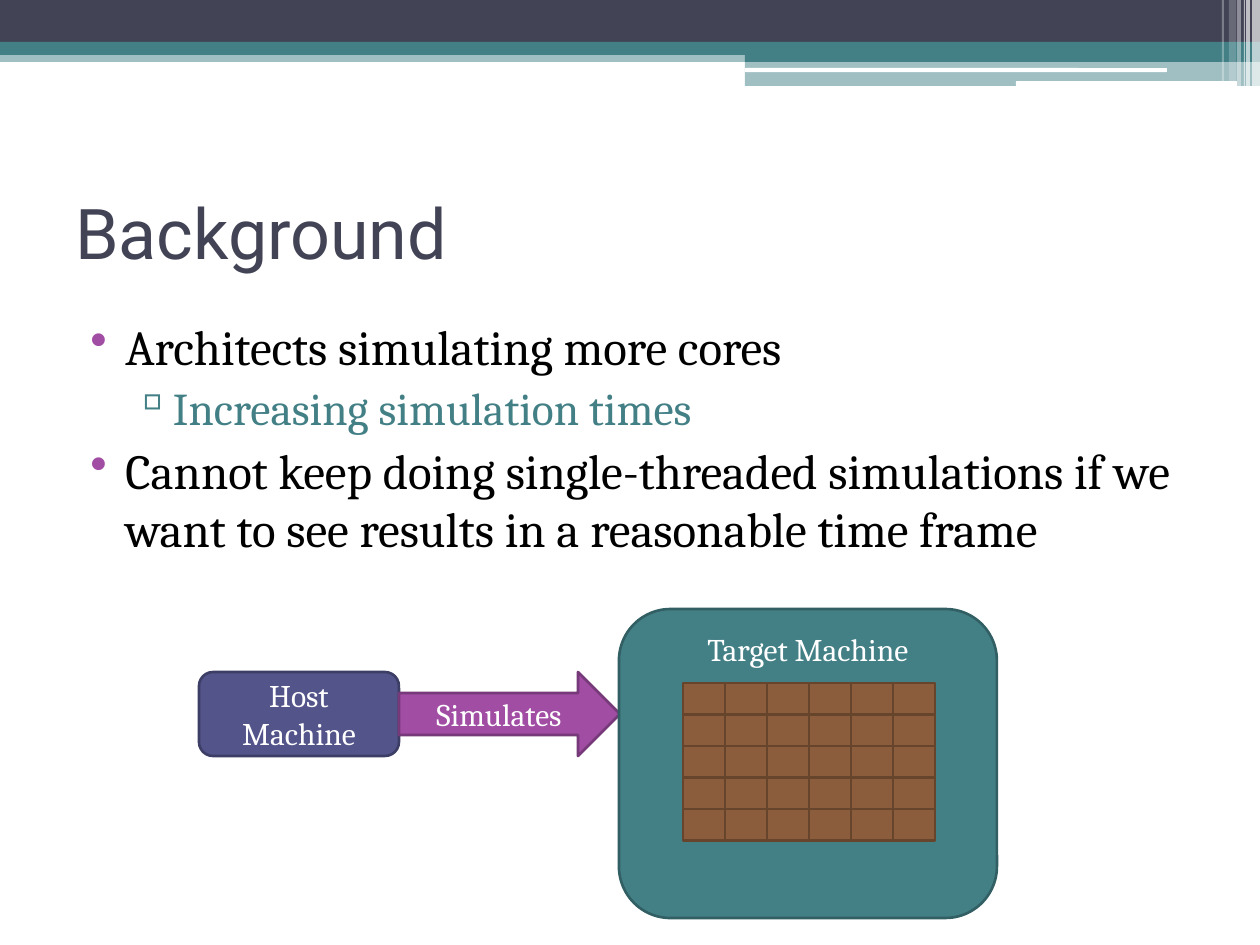
import pptx
import pptx.dml.color
import pptx.enum.shapes
import pptx.enum.text
import pptx.oxml
import pptx.oxml.ns
import pptx.util

SCALE = 914400 / 126
KIND = pptx.enum.shapes.MSO_SHAPE
ANCHOR = pptx.enum.text.MSO_ANCHOR
ALIGN = pptx.enum.text.PP_ALIGN
NAVY, TEAL, PURPLE, WHITE = "424456", "438086", "A04DA3", "FFFFFF"

# left, top, width, height, colour, opacity in percent
BANDS = [
    (0, 50, 1260, 12, TEAL, 50),
    (0, 0, 1260, 42, NAVY, 100),
    (0, 42, 1260, 13, TEAL, 100),
    (745, 49, 515, 13, TEAL, 100),
    (745, 61, 515, 25, TEAL, 50),
]
RULES = [(745, 68, 422, 4), (1016, 81, 221, 5)]
# left, width, height, opacity in percent
STRIPES = [
    (1252, 8, 86, 65), (1246, 4, 86, 65), (1244, 1, 86, 60),
    (1237, 4, 86, 40), (1229, 7, 81, 20), (1222, 2, 81, 30),
]
# text, size, text colour, bullet, bullet colour, left margin, hanging indent
POINTS = [
    ("Architects simulating more cores", 28, "000000", "•", PURPLE, 50, 35),
    ("Increasing simulation times", 26, TEAL, "▫", TEAL, 91, 34),
    ("Cannot keep doing single-threaded simulations if we want to see "
     "results in a reasonable time frame", 28, "000000", "•", PURPLE, 50, 35),
]


def px(n):
    return pptx.util.Emu(round(n * SCALE))


def rgb(code):
    return pptx.dml.color.RGBColor.from_string(code)


def node(tag, **attrs):
    item = pptx.oxml.parse_xml(f"<a:{tag} {pptx.oxml.ns.nsdecls('a')}/>")
    for name, value in attrs.items():
        item.set(name, str(value))
    return item


def block(slide, box, fill, line=None, kind=KIND.RECTANGLE, alpha=100):
    shape = slide.shapes.add_shape(kind, *map(px, box))
    shape.shadow.inherit = False
    shape.fill.solid()
    shape.fill.fore_color.rgb = rgb(fill)
    if alpha < 100:
        color = shape.fill._xPr.find(".//" + pptx.oxml.ns.qn("a:srgbClr"))
        color.append(node("alpha", val=alpha * 1000))
    if line:
        shape.line.color.rgb = rgb(line)
        shape.line.width = pptx.util.Pt(1.5)
    else:
        shape.line.fill.background()
    return shape


def write(para, text, size, color, font="Cambria", **form):
    run = para.add_run()
    run.text = text
    run.font.color.rgb = rgb(color)
    for name, value in {"size": pptx.util.Pt(size), "name": font}.items():
        setattr(run.font, name, value)
    for name, value in form.items():
        setattr(para, name, value)


def label(shape, text, anchor=ANCHOR.MIDDLE):
    shape.text_frame.vertical_anchor = anchor
    write(shape.text_frame.paragraphs[0], text, 18, WHITE,
          alignment=ALIGN.CENTER)


def area(slide, box, anchor):
    frame = slide.shapes.add_textbox(*map(px, box)).text_frame
    frame.word_wrap = True
    frame.vertical_anchor = anchor
    return frame


def bullet(para, sign, color, left, hang):
    props = para._p.get_or_add_pPr()
    props.set("marL", str(px(left)))
    props.set("indent", str(px(-hang)))
    paint = node("buClr")
    paint.append(node("srgbClr", val=color))
    props.extend([paint, node("buChar", char=sign)])


def header(slide):
    for *box, color, alpha in BANDS:
        block(slide, box, color, alpha=alpha)
    for box in RULES:
        bar = block(slide, box, WHITE, kind=KIND.ROUNDED_RECTANGLE)
        bar.adjustments[0] = 0.17
    for left, wide, high, alpha in STRIPES:
        block(slide, (left, 0, wide, high), WHITE, alpha=alpha)


def points(slide):
    frame = area(slide, (63, 310, 1134, 596), ANCHOR.TOP)
    for i, (text, size, color, *mark) in enumerate(POINTS):
        para = frame.add_paragraph() if i else frame.paragraphs[0]
        write(para, text, size, color, space_before=pptx.util.Pt(3),
              level=int(color == TEAL))
        bullet(para, *mark)


def cores(slide, left, top, rows=5, cols=6):
    """Draw the grid of cores; two rows span 63 px."""
    for row in range(rows):
        for col in range(cols):
            box = (left + 42 * col, top + 63 * row / 2, 42, 63 / 2)
            block(slide, box, "8B5D3D", "67452D")


def diagram(slide):
    host = block(slide, (199, 672, 200, 84), "53548A", "3D3E66",
                 KIND.ROUNDED_RECTANGLE)
    label(host, "Host Machine")
    arrow = block(slide, (399, 672, 221, 84), PURPLE, "763979",
                  KIND.RIGHT_ARROW)
    label(arrow, "Simulates")
    target = block(slide, (619, 609, 378, 309), TEAL, "325F63",
                   KIND.ROUNDED_RECTANGLE)
    label(target, "Target Machine", ANCHOR.TOP)
    cores(slide, 683, 683)


def main():
    deck = pptx.Presentation()
    deck.slide_width, deck.slide_height = px(1260), px(945)
    slide = deck.slides.add_slide(deck.slide_layouts[6])
    header(slide)
    title = area(slide, (63, 158, 1134, 147), ANCHOR.MIDDLE)
    write(title.paragraphs[0], "Background", 40, NAVY, "Roboto")
    points(slide)
    diagram(slide)
    deck.save("out.pptx")


if __name__ == "__main__":
    main()
